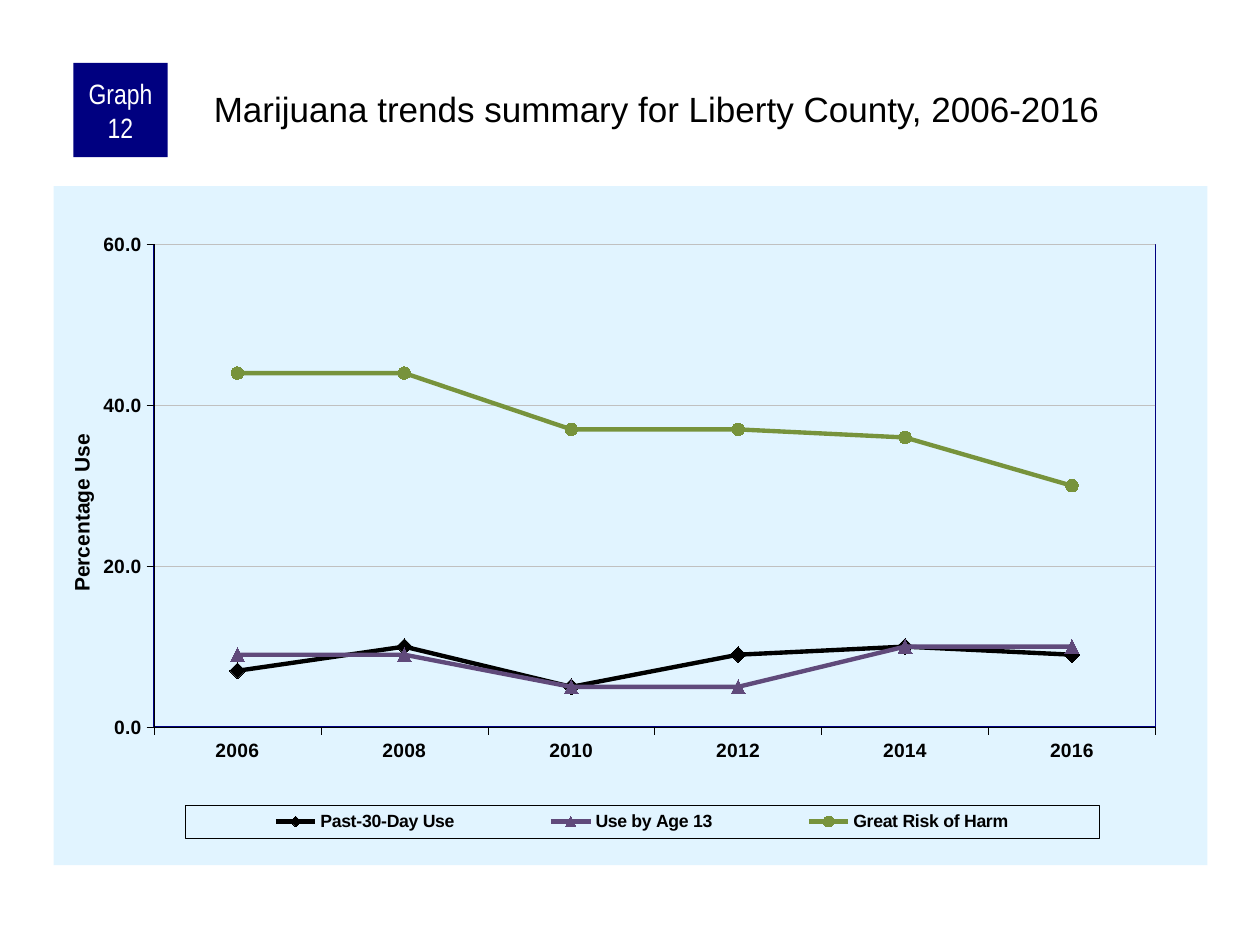
from dataclasses import dataclass

from lxml.etree import fromstring
from pptx import Presentation
from pptx.chart.data import CategoryChartData
from pptx.dml.color import RGBColor as Rgb
from pptx.enum.chart import XL_CHART_TYPE as ChartType
from pptx.enum.chart import XL_LEGEND_POSITION as LegendPos
from pptx.enum.chart import XL_MARKER_STYLE as Marker
from pptx.enum.chart import XL_TICK_MARK as Tick
from pptx.enum.shapes import MSO_SHAPE as Preset
from pptx.enum.text import MSO_ANCHOR as Anchor
from pptx.enum.text import PP_ALIGN as Align
from pptx.oxml.ns import nsdecls, qn
from pptx.util import Cm, Pt


@dataclass(frozen=True)
class Theme:
    navy: str = "000080"
    white: str = "FFFFFF"
    black: str = "000000"
    panel: str = "E1F4FF"
    grid: str = "C0C0C0"
    purple: str = "604A7B"
    green: str = "77933C"
    face: str = "Arial"
    narrow_face: str = "Arial Narrow"
    title_size: float = 20
    badge_size: float = 16
    axis_title_size: float = 12
    tick_size: float = 11
    legend_size: float = 10.1
    base_size: float = 8


THEME = Theme()

YEARS = ["2006", "2008", "2010", "2012", "2014", "2016"]
# Name, values, colour, marker style, marker size
TRENDS = [
    ("Past-30-Day Use", (7, 10, 5, 9, 10, 9), THEME.black, Marker.DIAMOND, 9),
    ("Use by Age 13", (9, 9, 5, 5, 10, 10), THEME.purple, Marker.TRIANGLE, 8),
    ("Great Risk of Harm", (44, 44, 37, 37, 36, 30), THEME.green, Marker.CIRCLE, 7),
]


def apply(target, values):
    for name, value in values.items():
        setattr(target, name, value)


def set_font(font, size, color=THEME.black, face=THEME.face, bold=False):
    apply(font, {"size": Pt(size), "name": face, "bold": bold})
    font.color.rgb = Rgb.from_string(color)


def set_line(line, color, width):
    line.color.rgb = Rgb.from_string(color)
    line.width = Pt(width)


def set_fill(fill, color):
    fill.solid()
    fill.fore_color.rgb = Rgb.from_string(color)


def chart_sp_pr(fill=None, line=None, width=0.75):
    """Format element for chart parts that have no format object."""
    def paint(color):
        return f'<a:solidFill><a:srgbClr val="{color}"/></a:solidFill>' if color else "<a:noFill/>"

    return fromstring(f'<c:spPr {nsdecls("c", "a")}>{paint(fill)}'
                      f'<a:ln w="{Pt(width)}">{paint(line)}</a:ln></c:spPr>')


def set_layout(part, index, target=None, **fractions):
    """Place a chart part by fractions of the chart's box."""
    for old in part.findall(qn("c:layout")):
        part.remove(old)
    inner = f'<c:layoutTarget val="{target}"/>' if target else ""
    inner += "".join(f'<c:{axis}Mode val="edge"/>' for axis in "xy")
    inner += "".join(f'<c:{key} val="{value}"/>' for key, value in fractions.items())
    part.insert(index, fromstring(
        f'<c:layout {nsdecls("c")}><c:manualLayout>{inner}</c:manualLayout></c:layout>'))


def write(frame, text, frame_format, align, **font):
    apply(frame, {"word_wrap": True, **frame_format})
    paragraph = frame.paragraphs[0]
    paragraph.alignment = align
    run = paragraph.add_run()
    run.text = text
    set_font(run.font, **font)


def add_header(slide, left, top, width):
    # Graph number badge
    side = Cm(1.9)
    badge = slide.shapes.add_shape(Preset.RECTANGLE, left, top, side, side)
    badge.shadow.inherit = False
    set_fill(badge.fill, THEME.navy)
    badge.line.fill.background()
    inset = Cm(0.13)
    write(badge.text_frame, "Graph 12",
          {"vertical_anchor": Anchor.MIDDLE, "margin_left": inset, "margin_right": inset,
           "margin_top": 0, "margin_bottom": 0},
          Align.CENTER, size=THEME.badge_size, color=THEME.white, face=THEME.narrow_face)

    # Slide title
    offset = Cm(2.75)
    title = slide.shapes.add_textbox(left + offset, top + Cm(0.41), width - offset, Cm(2.1))
    inset = Cm(0.08)
    write(title.text_frame, "Marijuana trends summary for Liberty County, 2006-2016",
          {"margin_left": inset, "margin_top": inset, "margin_right": 0, "margin_bottom": 0},
          Align.LEFT, size=THEME.title_size)


def add_trend_chart(slide, left, top, width, height):
    trend_data = CategoryChartData(number_format="0.0")
    trend_data.categories = YEARS
    for name, values, *_ in TRENDS:
        trend_data.add_series(name, values)
    chart = slide.shapes.add_chart(
        ChartType.LINE_MARKERS, left, top, width, height, trend_data).chart
    apply(chart, {"has_title": False, "has_legend": True})
    set_font(chart.font, THEME.base_size)
    chart.plots[0].vary_by_categories = False

    # Panel and plot frame
    root = chart.element
    root.find(qn("c:chart")).addnext(chart_sp_pr(fill=THEME.panel))
    plot_area = root.find(".//" + qn("c:plotArea"))
    set_layout(plot_area, 0, "inner", x=0.087, y=0.086, w=0.868, h=0.711)
    plot_area.append(chart_sp_pr(line=THEME.navy, width=1))

    # Trend lines
    for series, (_, _, color, marker, size) in zip(chart.plots[0].series, TRENDS):
        series.smooth = False
        set_line(series.format.line, color, 2.5)
        apply(series.marker, {"style": marker, "size": size})
        set_fill(series.marker.format.fill, color)
        set_line(series.marker.format.line, color, 0.75)

    # Axes
    years, percent = chart.category_axis, chart.value_axis
    for axis in (years, percent):
        apply(axis, {"major_tick_mark": Tick.OUTSIDE, "minor_tick_mark": Tick.NONE})
        set_font(axis.tick_labels.font, THEME.tick_size, bold=True)
        set_line(axis.format.line, THEME.black, 0.25)
    apply(percent, {"minimum_scale": 0, "maximum_scale": 60, "major_unit": 20,
                    "has_major_gridlines": True, "has_title": True})
    apply(percent.tick_labels, {"number_format": "0.0", "number_format_is_linked": False})
    set_line(percent.major_gridlines.format.line, THEME.grid, 0.25)
    caption = percent.axis_title.text_frame
    caption.text = "Percentage Use"
    set_font(caption.paragraphs[0].runs[0].font, THEME.axis_title_size, bold=True)
    set_layout(root.find(".//" + qn("c:valAx")).find(qn("c:title")), 1, x=0.01, y=0.36)

    # Legend
    apply(chart.legend, {"position": LegendPos.RIGHT, "include_in_layout": False})
    set_font(chart.legend.font, THEME.legend_size, bold=True)
    legend = root.find(".//" + qn("c:legend"))
    set_layout(legend, 1, x=0.114, y=0.912, w=0.792, h=0.048)
    legend.find(qn("c:overlay")).addnext(chart_sp_pr(line=THEME.black, width=0.25))


def main():
    deck = Presentation()
    apply(deck, {"slide_width": Cm(25.4), "slide_height": Cm(19.05)})
    slide = deck.slides.add_slide(deck.slide_layouts[6])
    add_header(slide, Cm(1.48), Cm(1.27), Cm(22.88))
    add_trend_chart(slide, Cm(1.08), Cm(3.75), Cm(23.26), Cm(13.69))
    deck.save("out.pptx")


if __name__ == "__main__":
    main()
